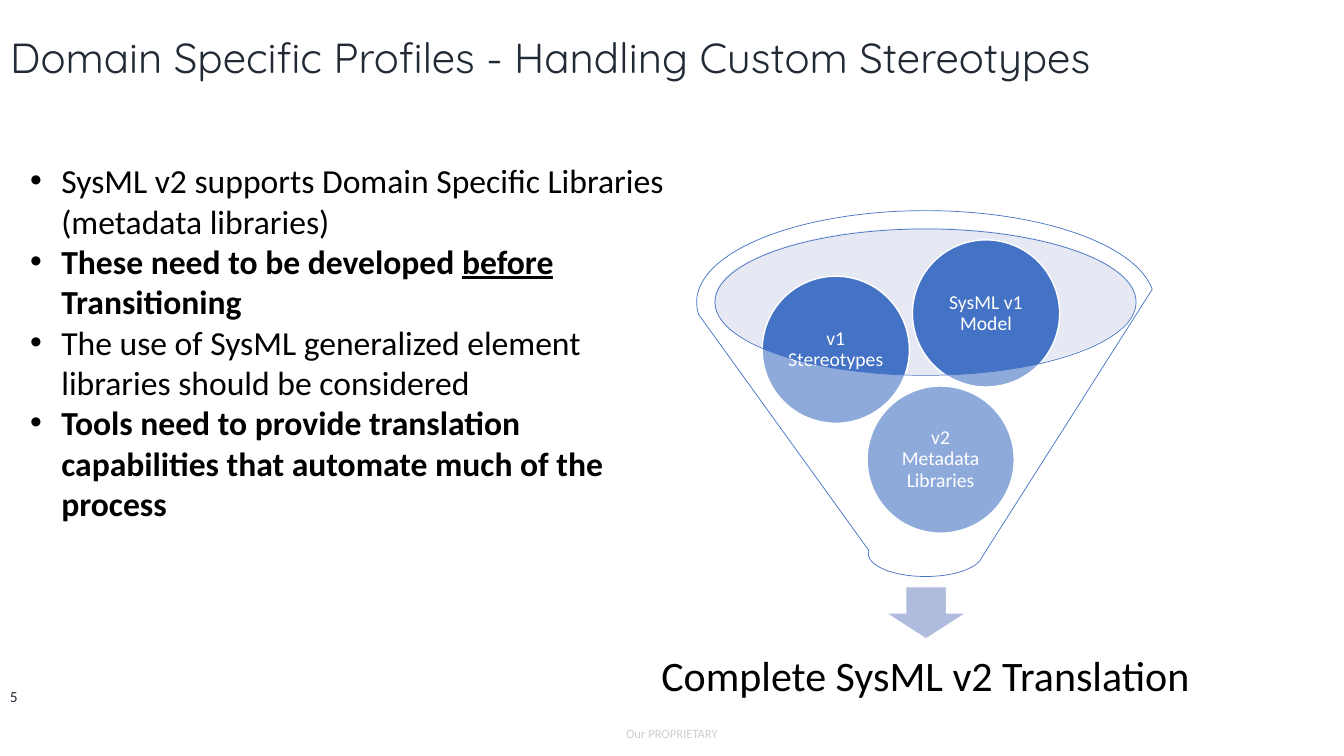
from lxml.etree import SubElement
from pptx import Presentation
from pptx.dml.color import RGBColor
from pptx.enum.shapes import MSO_SHAPE as Kind
from pptx.enum.text import MSO_ANCHOR as Anchor, MSO_AUTO_SIZE as Fit, PP_ALIGN as Align
from pptx.oxml.ns import qn
from pptx.util import Inches, Pt

TITLE = "Domain Specific Profiles - Handling Custom Stereotypes"
# Each point is a list of (text, style): b is bold, u is underlined.
POINTS = [
    [("SysML v2 supports Domain Specific Libraries (metadata libraries)", "")],
    [("These need to be developed ", "b"), ("before", "bu"), (" Transitioning", "b")],
    [("The use of SysML generalized element libraries should be considered", "")],
    [("Tools need to provide translation capabilities that automate much of the process", "b")],
]
# Text, left, top of each ball in the funnel
BALLS = [
    ("v2 Metadata Libraries", 8.6, 3.83),
    ("v1 Stereotypes", 7.56, 2.74),
    ("SysML v1 Model", 9.05, 2.38),
]
RESULT = "Complete SysML v2 Translation"
NUMBER = "5"
FOOTER = "Our PROPRIETARY"


class Theme:
    head, body = "Quicksand", "Calibri"
    ink, black, white, gray = "212A35", "000000", "FFFFFF", "D0CECE"
    blue, arrow, rim = "4472C4", "B0BCDE", "C1C9E4"
    big, text, ball, num, foot = 30, 24, 14, 11, 9
    ball_size, indent = 1.46, 0.31


def write(shape, paras, size, color, font=Theme.body, align=Align.LEFT,
          anchor=Anchor.TOP, pad=(0.1, 0.05), space=None, wrap=True, bullet=False):
    """Fill a shape with paragraphs, each a list of (text, style) runs."""
    frame = shape.text_frame
    frame.word_wrap, frame.auto_size = wrap, Fit.NONE
    frame.vertical_anchor = anchor
    frame.margin_left = frame.margin_right = Inches(pad[0])
    frame.margin_top = frame.margin_bottom = Inches(pad[1])
    for i, runs in enumerate(paras):
        para = frame.add_paragraph() if i else frame.paragraphs[0]
        if bullet:
            props = para._p.get_or_add_pPr()
            props.set("marL", str(Inches(Theme.indent)))
            props.set("indent", str(-Inches(Theme.indent)))
            SubElement(props, qn("a:buFont"), typeface="Arial")
            SubElement(props, qn("a:buChar"), char="•")
        para.alignment = align
        if space:
            para.line_spacing = space
        for text, style in runs:
            run = para.add_run()
            run.text = text
            face = run.font
            face.name, face.size = font, Pt(size)
            face.color.rgb = RGBColor.from_string(color)
            face.bold, face.underline = "b" in style, "u" in style


def label(slide, box, paras, size, color, **form):
    write(slide.shapes.add_textbox(*map(Inches, box)), paras, size, color, **form)


def draw(slide, kind, box, fill, alpha=None, line=None, width=1):
    shape = slide.shapes.add_shape(kind, *map(Inches, box))
    shape.shadow.inherit = False
    shape.fill.solid()
    shape.fill.fore_color.rgb = RGBColor.from_string(fill)
    if alpha:
        tint = shape._element.spPr.find(qn("a:solidFill"))[0]
        SubElement(tint, qn("a:alpha"), val=str(alpha * 1000))
    if line:
        shape.line.color.rgb = RGBColor.from_string(line)
        shape.line.width = Pt(width)
    else:
        shape.line.fill.background()
    return shape


def funnel(slide):
    draw(slide, Kind.OVAL, (7.08, 2.26, 4.19, 1.45), Theme.rim, alpha=40)
    draw(slide, Kind.DOWN_ARROW, (8.78, 5.82, 0.81, 0.52), Theme.arrow, line=Theme.white)
    label(slide, (6.32, 6.24, 5.72, 0.97), [[(RESULT, "")]], Theme.big, Theme.black,
          align=Align.CENTER, anchor=Anchor.MIDDLE, pad=(0.23, 0.23), space=0.9)
    for text, left, top in BALLS:
        ball = draw(slide, Kind.OVAL, (left, top, Theme.ball_size, Theme.ball_size),
                    Theme.blue, line=Theme.white)
        write(ball, [[(text, "")]], Theme.ball, Theme.white, align=Align.CENTER,
              anchor=Anchor.MIDDLE, pad=(0.02, 0.02), space=0.9)
    draw(slide, Kind.FUNNEL, (6.91, 2.09, 4.54, 3.63), Theme.white, alpha=40,
         line=Theme.blue, width=0.5)


def main():
    deck = Presentation()
    deck.slide_width, deck.slide_height = Inches(13.33), Inches(7.5)
    slide = deck.slides.add_slide(deck.slide_layouts[5])

    title = slide.shapes.title
    title.left, title.top, title.width, title.height = map(Inches, (0, 0.26, 11.87, 0.61))
    write(title, [[(TITLE, "")]], Theme.big, Theme.ink, font=Theme.head)

    label(slide, (0.2, 1.54, 6.65, 3.74), POINTS, Theme.text, Theme.black, bullet=True)
    funnel(slide)
    label(slide, (0, 6.74, 0.59, 0.33), [[(NUMBER, "")]], Theme.num, Theme.ink,
          anchor=Anchor.MIDDLE)
    label(slide, (6.15, 7.15, 1.03, 0.25), [[(FOOTER, "")]], Theme.foot, Theme.gray,
          align=Align.CENTER, wrap=False)
    deck.save("out.pptx")


if __name__ == "__main__":
    main()
